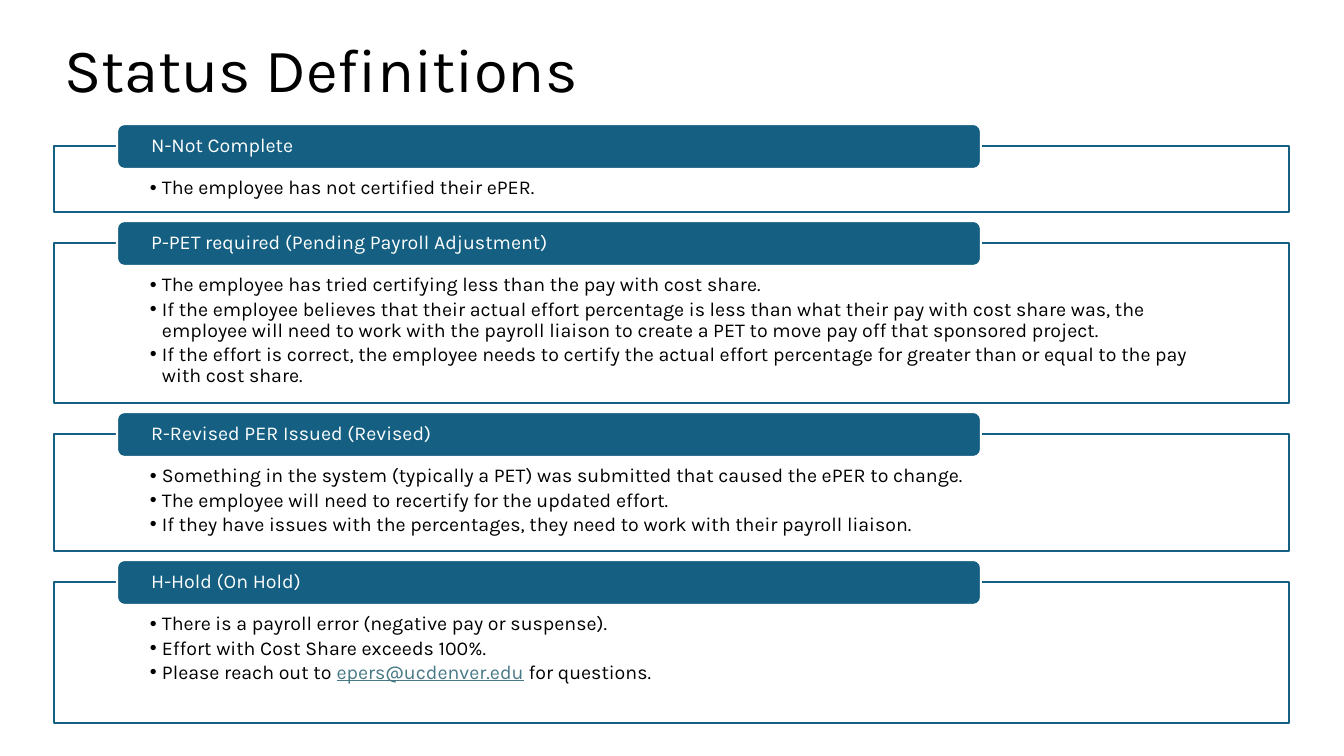
from lxml import etree
from pptx import Presentation
from pptx import util as u
from pptx.dml.color import RGBColor
from pptx.enum import shapes, text
from pptx.oxml.ns import qn

TITLE = "Status Definitions"
EMAIL = "epers@ucdenver.edu"
# heading, box height in px, definitions
STATUSES = [
    ("N-Not Complete", 66, ["The employee has not certified their ePER."]),
    ("P-PET required (Pending Payroll Adjustment)", 160, [
        "The employee has tried certifying less than the pay with cost share.",
        "If the employee believes that their actual effort percentage is less than what their "
        "pay with cost share was, the employee will need to work with the payroll liaison to "
        "create a PET to move pay off that sponsored project.",
        "If the effort is correct, the employee needs to certify the actual effort percentage "
        "for greater than or equal to the pay with cost share.",
    ]),
    ("R-Revised PER Issued (Revised)", 117, [
        "Something in the system (typically a PET) was submitted that caused the ePER to change.",
        "The employee will need to recertify for the updated effort.",
        "If they have issues with the percentages, they need to work with their payroll liaison.",
    ]),
    ("H-Hold (On Hold)", 141, [
        "There is a payroll error (negative pay or suspense).",
        "Effort with Cost Share exceeds 100%.",
        f"Please reach out to {EMAIL} for questions.",
    ]),
]
COLORS = {"teal": "156082", "white": "FFFFFF", "black": "000000", "email": "467886"}
FONT = "Karla"
BOX_LEFT, BOX_WIDTH, FIRST_TOP, BOX_GAP = 54, 1235, 146, 31
TAB_LEFT, TAB_WIDTH, TAB_HEIGHT, TAB_RISE = 117, 864, 45, 22
BULLET_INDENT = 12


def px(length):
    return u.Emu(round(length * 914400 / 100.8))


def rgb(name):
    return RGBColor.from_string(COLORS[name])


def add_bullet(paragraph):
    props = paragraph._p.get_or_add_pPr()
    props.set("marL", str(px(BULLET_INDENT)))
    props.set("indent", str(-px(BULLET_INDENT)))
    etree.SubElement(props, qn("a:buFont")).set("typeface", "Arial")
    etree.SubElement(props, qn("a:buChar")).set("char", "•")


def write(shape, lines, size=14, color="black", insets=(10, 5, 10, 5),
          anchor=text.MSO_ANCHOR.MIDDLE, bullets=False, after=0):
    """Fill a shape with one paragraph per line; insets are left, top, right, bottom."""
    frame = shape.text_frame
    frame.word_wrap = True
    frame.vertical_anchor = anchor
    (frame.margin_left, frame.margin_top,
     frame.margin_right, frame.margin_bottom) = map(px, insets)
    for number, line in enumerate(lines):
        paragraph = frame.add_paragraph() if number else frame.paragraphs[0]
        if bullets:
            add_bullet(paragraph)
        paragraph.alignment = text.PP_ALIGN.LEFT
        paragraph.line_spacing = 0.9
        paragraph.space_after = u.Pt(after)
        for part in filter(None, line.partition(EMAIL)):
            run = paragraph.add_run()
            run.text = part
            run.font.name = FONT
            run.font.size = u.Pt(size)
            run.font.color.rgb = rgb("email" if part == EMAIL else color)
            if part == EMAIL:
                run.font.underline = True


def add_block(slide, kind, left, top, width, height, fill, line):
    block = slide.shapes.add_shape(kind, px(left), px(top), px(width), px(height))
    block.shadow.inherit = False
    block.fill.solid()
    block.fill.fore_color.rgb = rgb(fill)
    block.line.color.rgb = rgb(line)
    block.line.width = u.Pt(1.5)
    return block


def main():
    deck = Presentation()
    deck.slide_width, deck.slide_height = px(1344), px(756)
    slide = deck.slides.add_slide(deck.slide_layouts[6])

    title = slide.shapes.add_textbox(px(BOX_LEFT), px(15), px(1159), px(115))
    write(title, [TITLE], size=44)

    top = FIRST_TOP
    for heading, height, definitions in STATUSES:
        box = add_block(slide, shapes.MSO_SHAPE.RECTANGLE, BOX_LEFT, top,
                        BOX_WIDTH, height, "white", "teal")
        write(box, definitions, insets=(96, 32, 96, 11), anchor=text.MSO_ANCHOR.TOP,
              bullets=True, after=2.1)
        tab = add_block(slide, shapes.MSO_SHAPE.ROUNDED_RECTANGLE, TAB_LEFT, top - TAB_RISE,
                        TAB_WIDTH, TAB_HEIGHT, "teal", "white")
        write(tab, [heading], color="white", insets=(32, 0, 32, 0))
        top += height + BOX_GAP

    deck.save("out.pptx")


if __name__ == "__main__":
    main()
